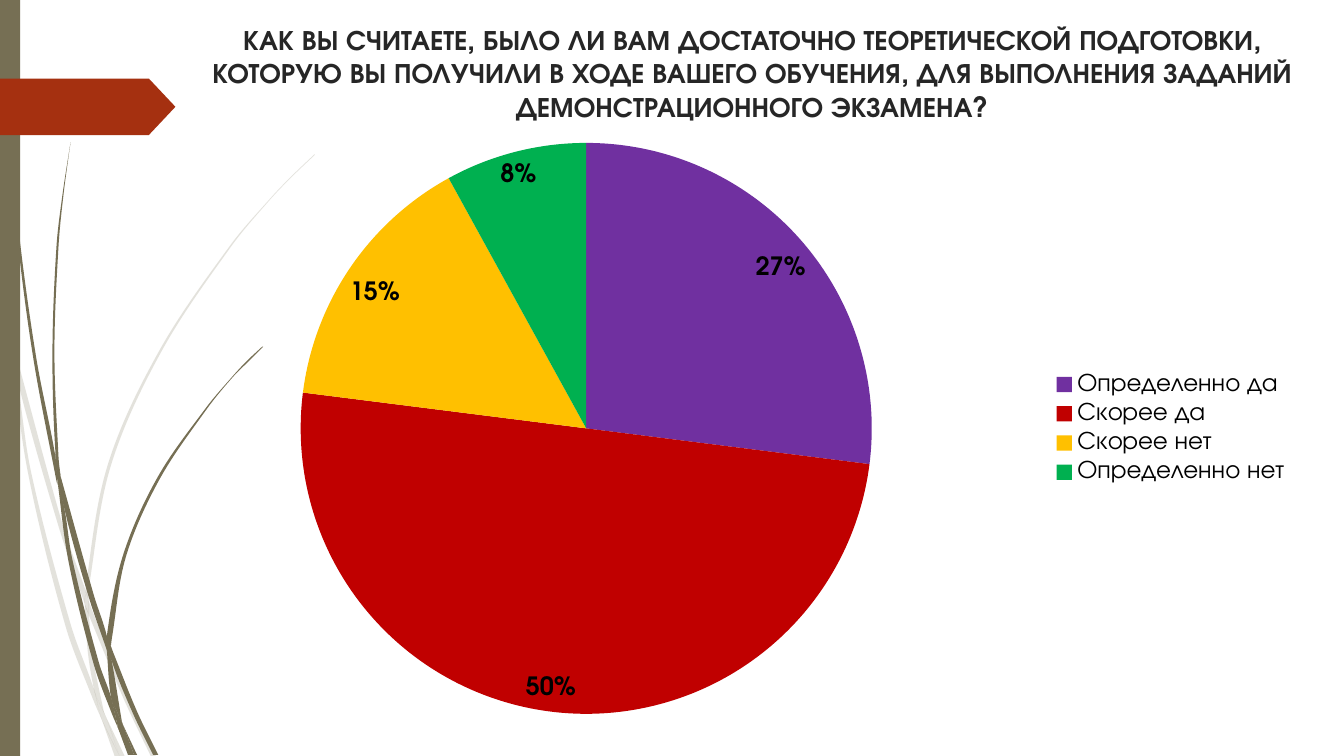
import math

from lxml import etree
from pptx import Presentation
from pptx import util as u
from pptx.chart.data import CategoryChartData
from pptx.dml.color import RGBColor
from pptx.enum import chart as charts, shapes, text
from pptx.oxml.ns import qn

# Content
TITLE = (
    "КАК ВЫ СЧИТАЕТЕ, БЫЛО ЛИ ВАМ ДОСТАТОЧНО ТЕОРЕТИЧЕСКОЙ ПОДГОТОВКИ, "
    "КОТОРУЮ ВЫ ПОЛУЧИЛИ В ХОДЕ ВАШЕГО ОБУЧЕНИЯ, ДЛЯ ВЫПОЛНЕНИЯ ЗАДАНИЙ "
    "ДЕМОНСТРАЦИОННОГО ЭКЗАМЕНА?"
)
ANSWERS = [
    ("Определенно да", 27, "7030A0"),
    ("Скорее да", 50, "C00000"),
    ("Скорее нет", 15, "FFC000"),
    ("Определенно нет", 8, "00B050"),
]
THEME = {
    "font": "TeX Gyre Adventor",
    "title_size": 20, "chart_size": 18,
    "title": "262626", "chart": "000000",
    "olive": "766F54", "rust": "A53010", "pale_alpha": 20,
}

# Places in inches: left, top, width, height
PAGE = (13.33, 7.5)
BAND = (0, 0, 0.2, 7.5)
ARROW = (0, 0.78, 1.74, 0.56)
TITLE_BOX = (1.77, 0.17, 11.38, 1.12)
CHART_BOX = (1.23, 1.28, 11.67, 5.94)

# Grass pieces: two edges each, both from top to bottom, in inches
PALE_GRASS = [
    ([(0, 2.82), (0.09, 3.22), (0.11, 3.5)], [(0, 2.99), (0.1, 3.44), (0.11, 3.5)]),
    ([(0.14, 3.45), (0.62, 5.2), (0.85, 5.86)],
     [(0.14, 3.45), (0.17, 3.76), (0.58, 5.22), (0.84, 5.99)]),
    ([(0.88, 5.96), (0.92, 6.07), (1.27, 6.92), (1.55, 7.51)],
     [(0.88, 6.1), (1.23, 6.94), (1.5, 7.51)]),
    ([(1.05, 7.11), (1.24, 7.51)], [(1.05, 7.11), (1.19, 7.51)]),
    ([(0.11, 3.5), (0.17, 3.76), (0.31, 4.69), (0.7, 6.19), (0.93, 6.83),
      (0.99, 7.07), (1.01, 7.14)],
     [(0.11, 3.5), (0.28, 4.7), (0.65, 6.21), (0.92, 6.93), (1.01, 7.14)]),
    ([(0.84, 5.99), (0.87, 6.46), (0.93, 6.83), (0.96, 6.92), (1.05, 7.11)],
     [(0.84, 5.99), (0.88, 6.1), (0.91, 6.46), (1.03, 7.06), (1.05, 7.11)]),
    ([(3.12, 1.53), (2.89, 1.75), (2.68, 1.97), (2.28, 2.44), (1.58, 3.48),
      (1.07, 4.61), (0.85, 5.84), (0.88, 5.96)],
     [(3.12, 1.54), (2.9, 1.75), (2.68, 1.98), (2.29, 2.45), (1.6, 3.49),
      (1.1, 4.62), (0.88, 5.84), (0.88, 5.96)]),
    ([(1.01, 7.14), (1.19, 7.51)], [(1.01, 7.14), (1.14, 7.51)]),
    ([(0.85, 5.86), (0.84, 5.99), (0.88, 6.1)], [(0.85, 5.86), (0.88, 5.96), (0.88, 6.1)]),
    ([(0.93, 6.83), (0.96, 6.92), (1.05, 7.11), (1.19, 7.51)],
     [(0.93, 6.83), (0.99, 7.07), (1.01, 7.14), (1.19, 7.51)]),
]
DARK_GRASS = [
    ([(0.03, 0), (0.05, 0.48), (0.08, 1.09), (0.19, 2.32), (0.36, 3.55),
      (0.55, 4.53), (0.57, 4.81)],
     [(0.03, 0), (0.03, 0.48), (0.07, 1.1), (0.17, 2.33), (0.33, 3.55),
      (0.56, 4.77), (0.57, 4.81)]),
    ([(0.6, 4.72), (0.93, 5.9), (1.06, 6.31), (1.06, 6.45)],
     [(0.6, 4.72), (0.64, 5.05), (0.88, 5.92), (1.06, 6.45)]),
    ([(1.1, 6.41), (1.13, 6.49), (1.36, 7.06), (1.57, 7.49)],
     [(1.1, 6.41), (1.11, 6.56), (1.32, 7.08), (1.52, 7.49)]),
    ([(0.57, 4.77), (0.64, 5.05), (0.72, 5.56), (0.98, 6.57), (1.1, 6.91),
      (1.16, 7.17), (1.17, 7.22)],
     [(0.57, 4.77), (0.68, 5.57), (0.93, 6.59), (1.11, 7.08), (1.17, 7.22)]),
    ([(0.7, 1.41), (0.63, 1.93), (0.58, 2.45), (0.54, 3.49), (0.58, 4.53), (0.6, 4.72)],
     [(0.7, 1.41), (0.62, 1.93), (0.56, 2.45), (0.52, 3.49), (0.55, 4.49), (0.6, 4.72)]),
    ([(1.22, 7.19), (1.36, 7.49)], [(1.22, 7.19), (1.33, 7.49)]),
    ([(0.55, 4.49), (0.6, 4.72), (0.64, 5.05)],
     [(0.55, 4.49), (0.55, 4.53), (0.57, 4.77), (0.64, 5.05)]),
    ([(2.6, 3.44), (2.45, 3.58), (2.31, 3.73), (2.04, 4.05), (1.56, 4.74),
      (1.22, 5.51), (1.06, 6.31), (1.1, 6.41)],
     [(2.61, 3.44), (2.46, 3.59), (2.31, 3.74), (2.05, 4.06), (1.58, 4.76),
      (1.25, 5.52), (1.11, 6.33), (1.1, 6.41)]),
    ([(1.17, 7.22), (1.31, 7.49)], [(1.17, 7.22), (1.27, 7.49)]),
    ([(1.06, 6.45), (1.1, 6.91), (1.16, 7.06), (1.22, 7.19)],
     [(1.06, 6.45), (1.09, 6.51), (1.11, 6.56), (1.21, 7.16), (1.22, 7.19)]),
    ([(1.06, 6.31), (1.06, 6.45), (1.11, 6.56)], [(1.06, 6.31), (1.1, 6.41), (1.11, 6.56)]),
    ([(1.1, 6.91), (1.16, 7.06), (1.22, 7.19), (1.33, 7.49)],
     [(1.1, 6.91), (1.16, 7.17), (1.17, 7.22), (1.3, 7.49)]),
]


def cm(inches):
    return u.Cm(inches * 2.54)


def place(box):
    return [cm(length) for length in box]


def paint(shape, colour):
    shape.shadow.inherit = False
    shape.fill.solid()
    shape.fill.fore_color.rgb = RGBColor.from_string(colour)
    shape.line.fill.background()


def style(font, size, colour, **extra):
    values = {"name": THEME["font"], "size": u.Pt(size), **extra}
    for name, value in values.items():
        setattr(font, name, value)
    font.color.rgb = RGBColor.from_string(colour)


def smooth(knots):
    """Bezier segments (two handles and an end) through the knots."""
    last = len(knots) - 1
    slopes = []
    for i in range(last + 1):
        near = knots[max(i - 1, 0):min(i + 1, last) + 1]
        length = sum(math.dist(a, b) for a, b in zip(near, near[1:]))
        slopes.append([(b - a) / length for a, b in zip(near[0], near[-1])])
    for i, (start, end) in enumerate(zip(knots, knots[1:])):
        reach = math.dist(start, end) / 3
        yield (tuple(p + m * reach for p, m in zip(start, slopes[i])),
               tuple(p - m * reach for p, m in zip(end, slopes[i + 1])), end)


def add_grass(page, edge, other_edge, alpha=100):
    back = other_edge[::-1]
    curves = list(smooth(edge))
    if edge[-1] != back[0]:
        curves.append((edge[-1], back[0], back[0]))
    curves += smooth(back)
    builder = page.shapes.build_freeform(*place(edge[0]))
    builder.add_line_segments([place(curve[-1]) for curve in curves], close=True)
    shape = builder.convert_to_shape()
    paint(shape, THEME["olive"])

    # Bend the sides
    for line, curve in zip(list(shape.element.iter(qn("a:lnTo"))), curves):
        bend = etree.Element(qn("a:cubicBezTo"))
        for x, y in curve:
            point = etree.SubElement(bend, qn("a:pt"))
            point.set("x", str(cm(x) - shape.left))
            point.set("y", str(cm(y) - shape.top))
        line.getparent().replace(line, bend)
    if alpha < 100:
        tint = shape.element.find(".//" + qn("a:srgbClr"))
        etree.SubElement(tint, qn("a:alpha")).set("val", str(alpha * 1000))


def add_title(page):
    frame = page.shapes.add_textbox(*place(TITLE_BOX)).text_frame
    frame.word_wrap = True
    frame.vertical_anchor = text.MSO_ANCHOR.TOP
    para = frame.paragraphs[0]
    para.alignment = text.PP_ALIGN.CENTER
    span = para.add_run()
    span.text = TITLE
    style(span.font, THEME["title_size"], THEME["title"], bold=True)


def add_pie(page):
    data = CategoryChartData()
    data.categories = [name for name, _, _ in ANSWERS]
    data.add_series("Series 1", [value for _, value, _ in ANSWERS])
    chart = page.shapes.add_chart(charts.XL_CHART_TYPE.PIE, *place(CHART_BOX), data).chart
    chart.has_title = False
    style(chart.font, THEME["chart_size"], THEME["chart"])
    chart.has_legend = True
    chart.legend.position = charts.XL_LEGEND_POSITION.RIGHT
    chart.legend.include_in_layout = False

    # Slices and their labels
    plot = chart.plots[0]
    plot.vary_by_categories = True
    for i, (_, _, colour) in enumerate(ANSWERS):
        fill = plot.series[0].points[i].format.fill
        fill.solid()
        fill.fore_color.rgb = RGBColor.from_string(colour)
    labels = plot.series[0].data_labels
    options = {"show_percentage": True, "show_value": False, "number_format": "0%",
               "number_format_is_linked": False,
               "position": charts.XL_LABEL_POSITION.BEST_FIT}
    for name, value in options.items():
        setattr(labels, name, value)
    style(labels.font, THEME["chart_size"], THEME["chart"], bold=True)


def main():
    deck = Presentation()
    deck.slide_width, deck.slide_height = place(PAGE)
    page = deck.slides.add_slide(deck.slide_layouts[6])

    # Side decoration
    for edges in PALE_GRASS:
        add_grass(page, *edges, alpha=THEME["pale_alpha"])
    for edges in DARK_GRASS:
        add_grass(page, *edges)
    band = page.shapes.add_shape(shapes.MSO_SHAPE.RECTANGLE, *place(BAND))
    paint(band, THEME["olive"])
    arrow = page.shapes.add_shape(shapes.MSO_SHAPE.PENTAGON, *place(ARROW))
    arrow.adjustments[0] = 0.47
    paint(arrow, THEME["rust"])

    # Question and answers
    add_title(page)
    add_pie(page)
    deck.save("out.pptx")


if __name__ == "__main__":
    main()
